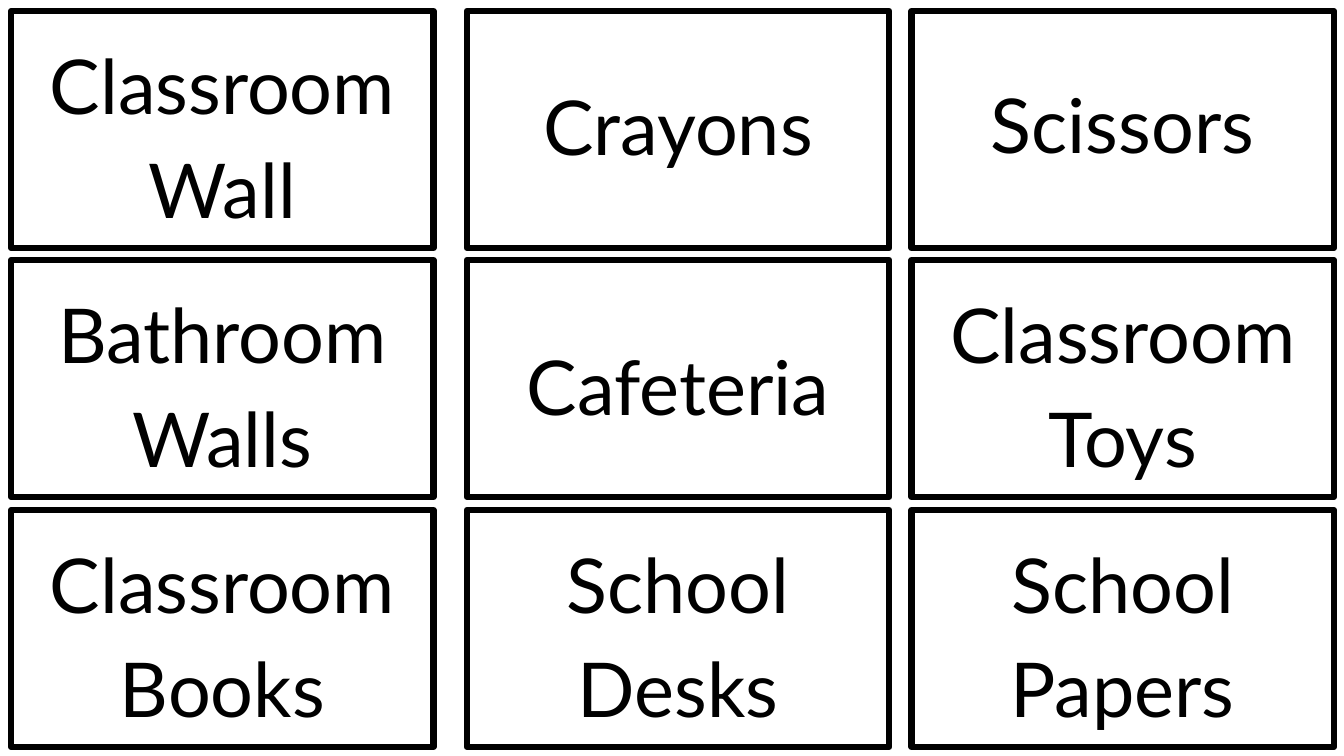
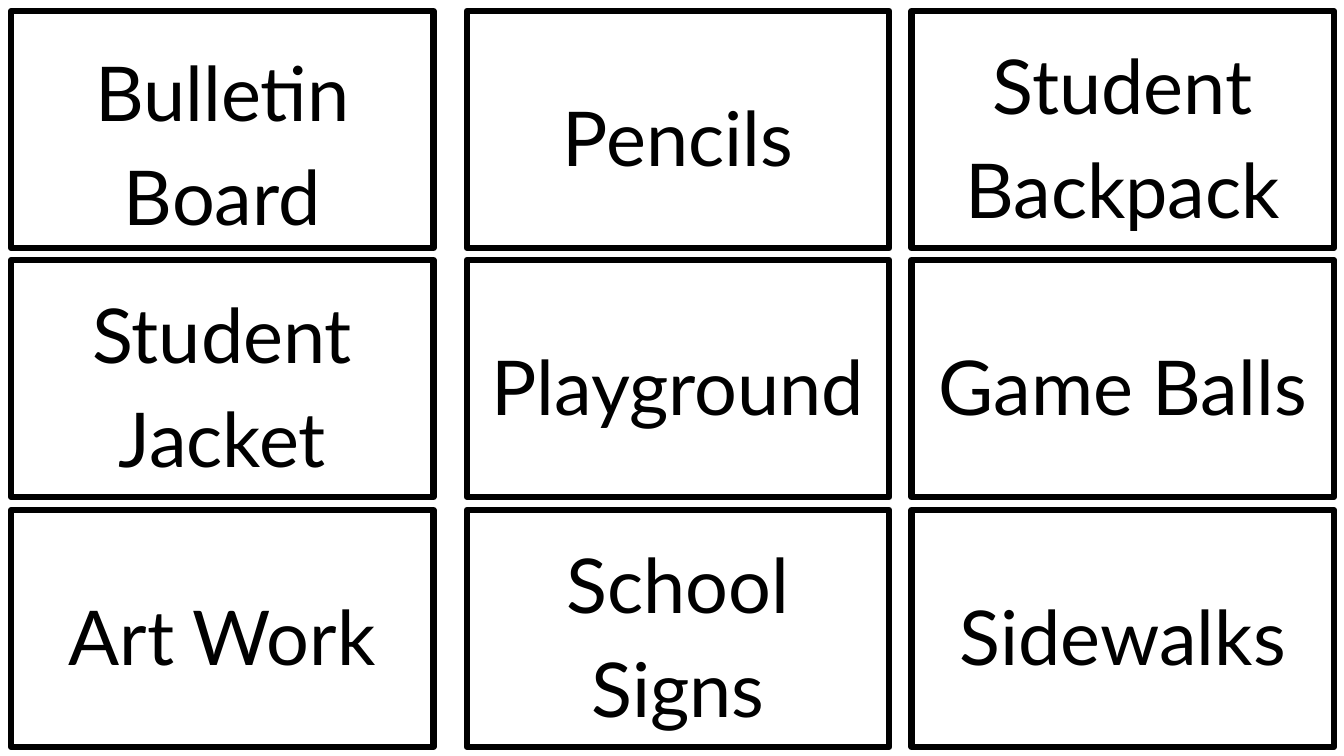
"""Builds two slides of word cards for places and things at school."""
from pptx import Presentation
from pptx.dml.color import RGBColor
from pptx.enum import shapes, text
from pptx.util import Inches, Pt

WORD_SLIDES = [
    [["Classroom Wall", "Crayons", "Scissors"],
     ["Bathroom Walls", "Cafeteria", "Classroom Toys"],
     ["Classroom Books", "School Desks", "School Papers"]],
    [["Bulletin Board", "Pencils", "Student Backpack"],
     ["Student Jacket", "Playground", "Game Balls"],
     ["Art Work", "School Signs", "Sidewalks"]],
]
WORD_LOWERED = {"Crayons": -0.11, "Scissors": -0.13, "Bulletin Board": 0.07}

COLUMN_LEFTS = [0.11, 4.63, 9.04]
ROW_TOPS = [0.11, 2.58, 5.06]
CARD_WIDTH, CARD_HEIGHT = 4.19, 2.35
INSET = 0.05
INK, PAPER = "000000", "FFFFFF"
WORD_FONT = {"name": "Lato", "size": Pt(54)}
WORD_LINE = {"alignment": text.PP_ALIGN.CENTER, "line_spacing": 1.15}


def colour(hex_string):
    return RGBColor.from_string(hex_string)


def set_all(target, values):
    for name, value in values.items():
        setattr(target, name, value)


def add_card(slide, left, top, word):
    card = slide.shapes.add_shape(
        shapes.MSO_SHAPE.RECTANGLE, Inches(left), Inches(top),
        Inches(CARD_WIDTH), Inches(CARD_HEIGHT))
    card.shadow.inherit = False
    card.fill.solid()
    card.fill.fore_color.rgb = colour(PAPER)
    card.line.color.rgb = colour(INK)
    card.line.width = Pt(4.5)

    lowered = WORD_LOWERED.get(word, 0)
    set_all(card.text_frame, {
        "word_wrap": True,
        "vertical_anchor": text.MSO_ANCHOR.MIDDLE,
        "margin_top": Inches(INSET + 2 * max(lowered, 0)),
        "margin_bottom": Inches(INSET + 2 * max(-lowered, 0)),
    })
    line = card.text_frame.paragraphs[0]
    set_all(line, WORD_LINE)
    run = line.add_run()
    run.text = word
    set_all(run.font, WORD_FONT)
    run.font.color.rgb = colour(INK)


def main():
    deck = Presentation()
    deck.slide_width, deck.slide_height = Inches(13.33), Inches(7.5)
    blank_layout = deck.slide_layouts[6]
    for word_rows in WORD_SLIDES:
        slide = deck.slides.add_slide(blank_layout)
        for top, words in zip(ROW_TOPS, word_rows):
            for left, word in zip(COLUMN_LEFTS, words):
                add_card(slide, left, top, word)
    deck.save("out.pptx")


if __name__ == "__main__":
    main()
